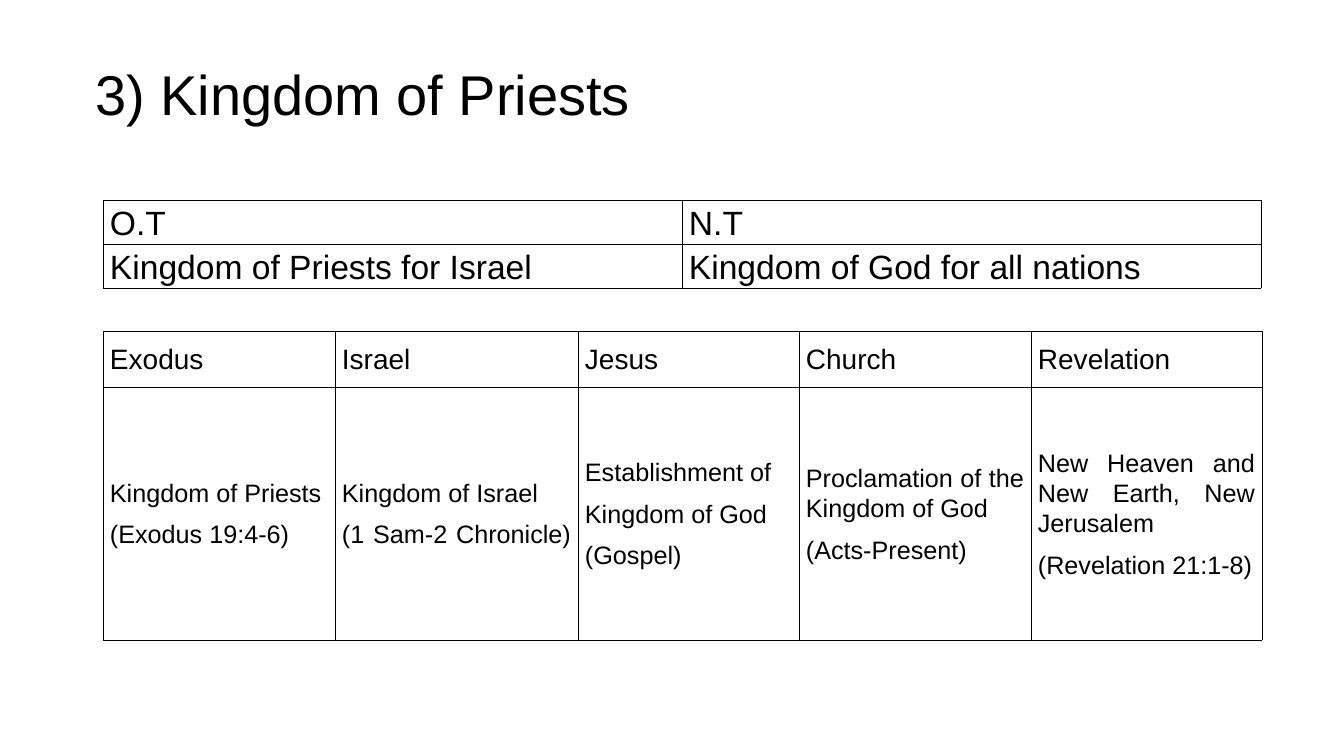
import pptx
import pptx.util
import pptx.dml.color
import pptx.enum.text
import pptx.oxml
from dataclasses import dataclass

PX = 914400 / 100.8  # EMU in one px
ALIGN = pptx.enum.text.PP_ALIGN
MIDDLE = pptx.enum.text.MSO_ANCHOR.MIDDLE


@dataclass(frozen=True)
class Theme:
    font: str = "Arial"
    ink: str = "000000"
    paper: str = "FFFFFF"
    title: int = 40
    testament: int = 24
    head: int = 20
    body: int = 18
    border: float = 0.28


T = Theme()


def px(n):
    return pptx.util.Emu(round(n * PX))


def rgb(value):
    return pptx.dml.color.RGBColor.from_string(value)


def write(tf, text, size, align=ALIGN.JUSTIFY, spacing=1.07, after=8):
    """Fill a text frame, one paragraph for each line of text."""
    for i, line in enumerate(text.split("\n")):
        p = tf.add_paragraph() if i else tf.paragraphs[0]
        p.alignment = align
        p.line_spacing = spacing
        p.space_before = pptx.util.Pt(0)
        p.space_after = pptx.util.Pt(after)
        r = p.add_run()
        r.text = line
        r.font.name = T.font
        r.font.size = pptx.util.Pt(size)
        r.font.bold = False
        r.font.color.rgb = rgb(T.ink)


def add_borders(cell):
    tcPr = cell._tc.get_or_add_tcPr()
    for side in ("lnL", "lnR", "lnT", "lnB"):
        tcPr.append(pptx.oxml.parse_xml(
            f'<a:{side} xmlns:a="http://schemas.openxmlformats.org/drawingml/2006/main" '
            f'w="{pptx.util.Pt(T.border)}"><a:solidFill><a:srgbClr val="{T.ink}"/>'
            f'</a:solidFill></a:{side}>'))


def add_title(s, box, text):
    sp = s.shapes.title
    sp.left, sp.top, sp.width, sp.height = map(px, box)
    tf = sp.text_frame
    tf.word_wrap = True
    tf.vertical_anchor = MIDDLE
    write(tf, text, T.title, align=ALIGN.CENTER, spacing=1.0, after=0)


def add_grid(s, left, top, widths, heights, rows, sizes):
    """Place a ruled table; each row has its own height and type size."""
    frame = s.shapes.add_table(len(rows), len(widths), px(left), px(top),
                               px(sum(widths)), px(sum(heights)))
    table = frame.table
    table.first_row = table.horz_banding = False
    for column, width in zip(table.columns, widths):
        column.width = px(width)
    for row, height, texts, size in zip(table.rows, heights, rows, sizes):
        row.height = px(height)
        for cell, text in zip(row.cells, texts):
            cell.margin_left = cell.margin_right = px(7)
            cell.margin_top = cell.margin_bottom = px(2)
            cell.vertical_anchor = MIDDLE
            add_borders(cell)
            cell.fill.background()
            write(cell.text_frame, text, size)


def build_slide(prs):
    s = prs.slides.add_slide(prs.slide_layouts[5])
    s.background.fill.solid()
    s.background.fill.fore_color.rgb = rgb(T.paper)
    add_title(s, (68, 30, 589, 126), "3) Kingdom of Priests")

    # Two testaments
    add_grid(s, 103, 200, [579] * 2, [44] * 2,
             [("O.T", "N.T"),
              ("Kingdom of Priests for Israel", "Kingdom of God for all nations")],
             [T.testament] * 2)

    # Five stages of the kingdom
    add_grid(s, 103, 331, [232, 243, 221, 232, 231], [56, 253],
             [("Exodus", "Israel", "Jesus", "Church", "Revelation"),
              ("Kingdom of Priests\n(Exodus 19:4-6)",
               "Kingdom of Israel\n(1 Sam-2 Chronicle) ",
               "Establishment of \nKingdom of God \n(Gospel)",
               "Proclamation of the Kingdom of God \n(Acts-Present)",
               "New Heaven and New Earth, New Jerusalem \n(Revelation 21:1-8)")],
             [T.head, T.body])


def main():
    prs = pptx.Presentation()
    prs.slide_width, prs.slide_height = px(1344), px(756)
    build_slide(prs)
    prs.save("out.pptx")


if __name__ == "__main__":
    main()
